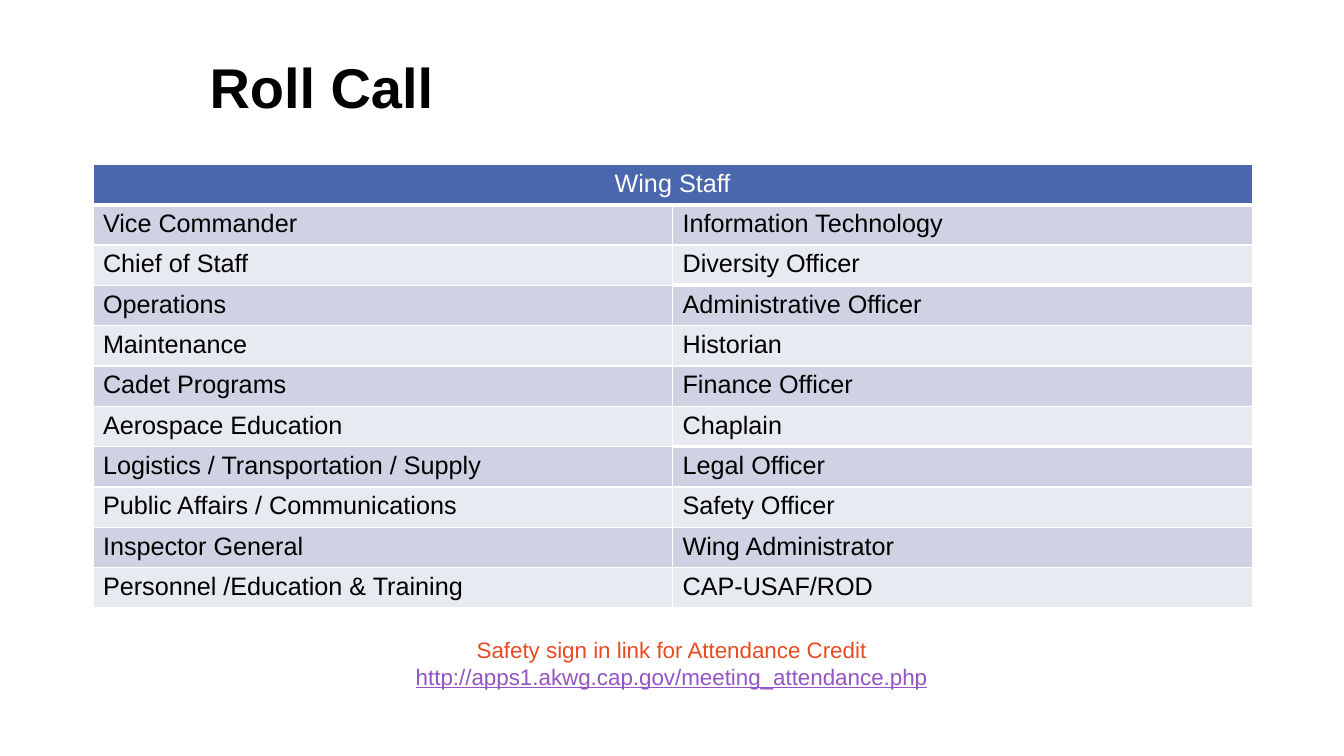
import dataclasses
import pptx
import pptx.util
import pptx.dml.color
import pptx.enum.text
import pptx.oxml.ns
import lxml.etree

Pt = pptx.util.Pt
Align = pptx.enum.text.PP_ALIGN
Anchor = pptx.enum.text.MSO_ANCHOR


@dataclasses.dataclass(frozen=True)
class Theme:
    font: str = "Arial"
    ink: str = "000000"
    white: str = "FFFFFF"
    head: str = "4A66AC"
    dark: str = "CED2E2"
    light: str = "E8EAF1"
    alert: str = "E84B21"
    link: str = "9454C3"
    title: int = 40
    body: int = 18
    note: int = 16


theme = Theme()

STAFF = [
    ("Vice Commander", "Information Technology"),
    ("Chief of Staff", "Diversity Officer"),
    ("Operations", "Administrative Officer"),
    ("Maintenance", "Historian"),
    ("Cadet Programs", "Finance Officer"),
    ("Aerospace Education", "Chaplain"),
    ("Logistics / Transportation / Supply", "Legal Officer"),
    ("Public Affairs / Communications", "Safety Officer"),
    ("Inspector General", "Wing Administrator"),
    ("Personnel /Education & Training", "CAP-USAF/ROD"),
]
THICK = {(0, 0), (0, 1), (2, 1), (6, 1)}


def color(code):
    return pptx.dml.color.RGBColor.from_string(code)


def add_run(para, text, size, code, bold=False, line=False):
    run = para.add_run()
    run.text = text
    font = run.font
    font.name = theme.font
    font.size = Pt(size)
    font.bold = bold
    font.underline = line
    font.color.rgb = color(code)


def add_box(slide, box, anchor=Anchor.TOP):
    frame = slide.shapes.add_textbox(*map(Pt, box)).text_frame
    frame.word_wrap = True
    frame.vertical_anchor = anchor
    return frame


def add_edge(cell, index, side, width):
    name = pptx.oxml.ns.qn
    edge = lxml.etree.Element(name("a:ln" + side), w=str(Pt(width)))
    fill = lxml.etree.SubElement(edge, name("a:solidFill"))
    lxml.etree.SubElement(fill, name("a:srgbClr"), val=theme.white)
    cell._tc.get_or_add_tcPr().insert(index, edge)


def fill_cell(cell, row, col, text):
    cell.fill.solid()
    shade = theme.dark if row % 2 else theme.light
    cell.fill.fore_color.rgb = color(shade if row else theme.head)
    top = 3 if (row - 1, col) in THICK else 1
    base = 3 if (row, col) in THICK else 1
    for index, (side, width) in enumerate(zip("LRTB", (1, 1, top, base))):
        add_edge(cell, index, side, width)
    if text:
        para = cell.text_frame.paragraphs[0]
        para.alignment = Align.LEFT if row else Align.CENTER
        add_run(para, text, theme.body, theme.ink if row else theme.white)


def add_title(slide, box):
    para = add_box(slide, box, Anchor.MIDDLE).paragraphs[0]
    para.line_spacing = 0.9
    add_run(para, "Roll Call", theme.title, theme.ink, bold=True)


def add_staff(slide, box):
    rows = [("Wing Staff", "")] + STAFF
    table = slide.shapes.add_table(len(rows), 2, *map(Pt, box)).table
    for col in table.columns:
        col.width = Pt(box[2] / 2)
    for row in table.rows:
        row.height = Pt(box[3] / len(rows))
    for row, texts in enumerate(rows):
        for col, text in enumerate(texts):
            fill_cell(table.cell(row, col), row, col, text)
    table.cell(0, 0).merge(table.cell(0, 1))


def add_note(slide, box):
    frame = add_box(slide, box)
    first, last = frame.paragraphs[0], frame.add_paragraph()
    first.alignment = last.alignment = Align.CENTER
    add_run(first, "Safety sign in link for Attendance Credit",
            theme.note, theme.alert)
    add_run(last, "http://apps1.akwg.cap.gov/meeting_attendance.php",
            theme.note, theme.link, line=True)


def main():
    deck = pptx.Presentation()
    deck.slide_width, deck.slide_height = Pt(960), Pt(540)
    slide = deck.slides.add_slide(deck.slide_layouts[6])
    add_staff(slide, (66.4, 117.4, 828, 316.8))
    add_title(slide, (142.6, 31.7, 761, 66.2))
    add_note(slide, (240, 450.7, 479.5, 46))
    deck.save("out.pptx")


if __name__ == "__main__":
    main()
